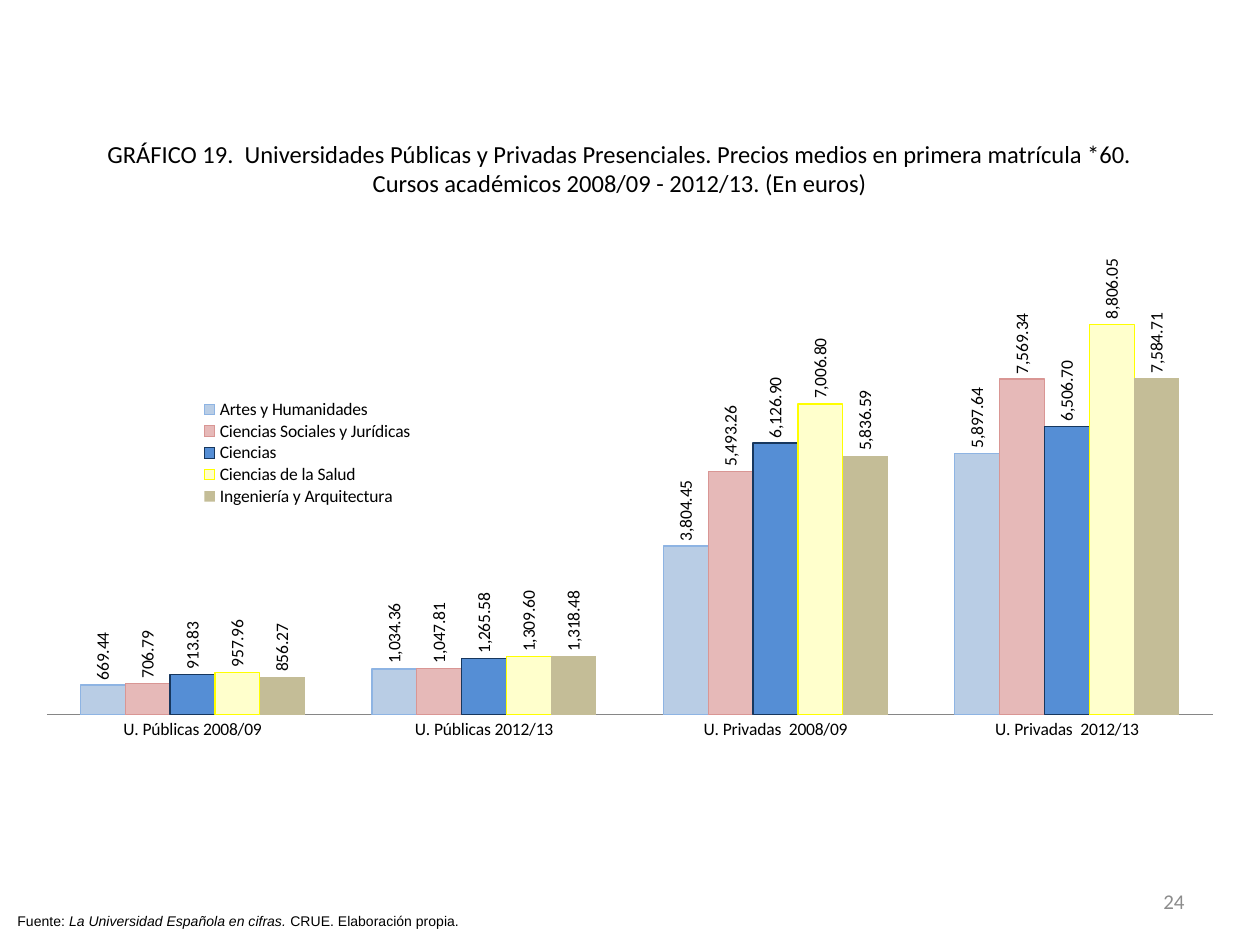
import pptx
import pptx.chart.data
import pptx.dml.color
import pptx.enum.chart
import pptx.enum.text
import pptx.oxml
import pptx.oxml.ns
import pptx.util

NUMBER_FORMAT = r"#,##0.00;\(#,##0.00\)"
CATEGORIES = ["U. Públicas 2008/09", "U. Públicas 2012/13",
              "U. Privadas  2008/09", "U. Privadas  2012/13"]
SERIES = [
    ("Artes y Humanidades", (669.44, 1034.36, 3804.45, 5897.64), "B9CDE5", "8EB4E3"),
    ("Ciencias Sociales y Jurídicas", (706.79, 1047.81, 5493.26, 7569.34), "E6B9B8", "D99694"),
    ("Ciencias", (913.83, 1265.58, 6126.90, 6506.70), "558ED5", "17375E"),
    ("Ciencias de la Salud", (957.96, 1309.60, 7006.80, 8806.05), "FFFFCC", "FFFF00"),
    ("Ingeniería y Arquitectura", (856.27, 1318.48, 5836.59, 7584.71), "C4BD97", None),
]


def color(hex_string):
    return pptx.dml.color.RGBColor.from_string(hex_string)


def inches(box):
    return [pptx.util.Inches(length) for length in box]


def format_font(font, size, name="Calibri", shade="000000"):
    font.size = pptx.util.Pt(size)
    font.name = name
    font.color.rgb = color(shade)


def set_layout(parent, index, shares, inner=False):
    for old in parent.findall(pptx.oxml.ns.qn("c:layout")):
        parent.remove(old)
    target = '<c:layoutTarget val="inner"/>' if inner else ""
    modes = "".join(f'<c:{side}Mode val="edge"/>' for side in "xy")
    sizes = "".join(f'<c:{side} val="{share}"/>' for side, share in zip("xywh", shares))
    parent.insert(index, pptx.oxml.parse_xml(
        f'<c:layout {pptx.oxml.ns.nsdecls("c")}><c:manualLayout>'
        f"{target}{modes}{sizes}</c:manualLayout></c:layout>"))


def format_series(series, fill, line):
    series.format.fill.solid()
    series.format.fill.fore_color.rgb = color(fill)
    series.invert_if_negative = False
    if line:
        series.format.line.color.rgb = color(line)
        series.format.line.width = pptx.util.Pt(0.75)
    else:
        series.format.line.fill.background()
    labels = series.data_labels
    labels.show_value = True
    labels.number_format = NUMBER_FORMAT
    labels.number_format_is_linked = False
    labels.position = pptx.enum.chart.XL_LABEL_POSITION.OUTSIDE_END
    format_font(labels.font, 10)
    body = labels._element.find(".//" + pptx.oxml.ns.qn("a:bodyPr"))
    body.set("rot", "-5400000")
    body.set("vert", "horz")


def add_price_chart(page, box):
    data = pptx.chart.data.CategoryChartData(number_format=NUMBER_FORMAT)
    data.categories = CATEGORIES
    for name, prices, fill, line in SERIES:
        data.add_series(name, prices)
    chart = page.shapes.add_chart(
        pptx.enum.chart.XL_CHART_TYPE.COLUMN_CLUSTERED, *inches(box), data).chart
    format_font(chart.font, 10)
    chart.has_title = False
    plot = chart.plots[0]
    plot.gap_width = 150
    plot.overlap = 0
    plot.vary_by_categories = False
    for series, (name, prices, fill, line) in zip(plot.series, SERIES):
        format_series(series, fill, line)

    chart.category_axis.major_tick_mark = pptx.enum.chart.XL_TICK_MARK.NONE
    chart.category_axis.format.line.color.rgb = color("868686")
    chart.category_axis.format.line.width = pptx.util.Pt(0.75)
    chart.value_axis.visible = False
    chart.value_axis.has_major_gridlines = False
    chart.value_axis.minimum_scale = 0
    chart.value_axis.maximum_scale = 10000
    chart.value_axis.tick_labels.number_format = NUMBER_FORMAT
    chart.value_axis.tick_labels.number_format_is_linked = False

    chart.has_legend = True
    chart.legend.position = pptx.enum.chart.XL_LEGEND_POSITION.RIGHT
    chart.legend.include_in_layout = False
    format_font(chart.legend.font, 10)
    set_layout(chart.legend._element, 1, (0.14, 0.39, 0.19, 0.16))
    plot_area = chart._chartSpace.chart.plotArea
    set_layout(plot_area, 0, (0.018, 0.208, 0.971, 0.64), inner=True)


def add_title(page, box):
    title = page.shapes.title
    title.left, title.top, title.width, title.height = inches(box)
    title.text_frame.text = (
        "GRÁFICO 19.  Universidades Públicas y Privadas Presenciales. "
        "Precios medios en primera matrícula *60. "
        "Cursos académicos 2008/09 - 2012/13. (En euros)")
    title.text_frame.vertical_anchor = pptx.enum.text.MSO_ANCHOR.TOP
    title.text_frame.auto_size = pptx.enum.text.MSO_AUTO_SIZE.NONE
    para = title.text_frame.paragraphs[0]
    para.alignment = pptx.enum.text.PP_ALIGN.CENTER
    format_font(para.runs[0].font, 14)


def add_text(page, box):
    frame = page.shapes.add_textbox(*inches(box)).text_frame
    frame.word_wrap = True
    return frame


def add_source(page, box):
    para = add_text(page, box).paragraphs[0]
    for text, italic in (("Fuente: ", False),
                         ("La Universidad Española en cifras.", True),
                         (" CRUE. Elaboración propia.", False)):
        span = para.add_run()
        span.text = text
        span.font.italic = italic
        format_font(span.font, 8, "Arial")


def add_page_number(page, box):
    frame = add_text(page, box)
    frame.text = "24"
    frame.vertical_anchor = pptx.enum.text.MSO_ANCHOR.MIDDLE
    para = frame.paragraphs[0]
    para.alignment = pptx.enum.text.PP_ALIGN.RIGHT
    format_font(para.runs[0].font, 12, shade="8C8C8C")


def main():
    deck = pptx.Presentation()
    deck.slide_width, deck.slide_height = inches((10, 7.5))
    page = deck.slides.add_slide(deck.slide_layouts.get_by_name("Title Only"))
    add_price_chart(page, (0.2, 1.01, 9.53, 5.5))
    add_title(page, (0.51, 1.05, 8.82, 0.57))
    add_source(page, (0.04, 7.19, 7.8, 0.24))
    add_page_number(page, (7.17, 6.95, 2.33, 0.4))
    deck.save("out.pptx")


if __name__ == "__main__":
    main()
